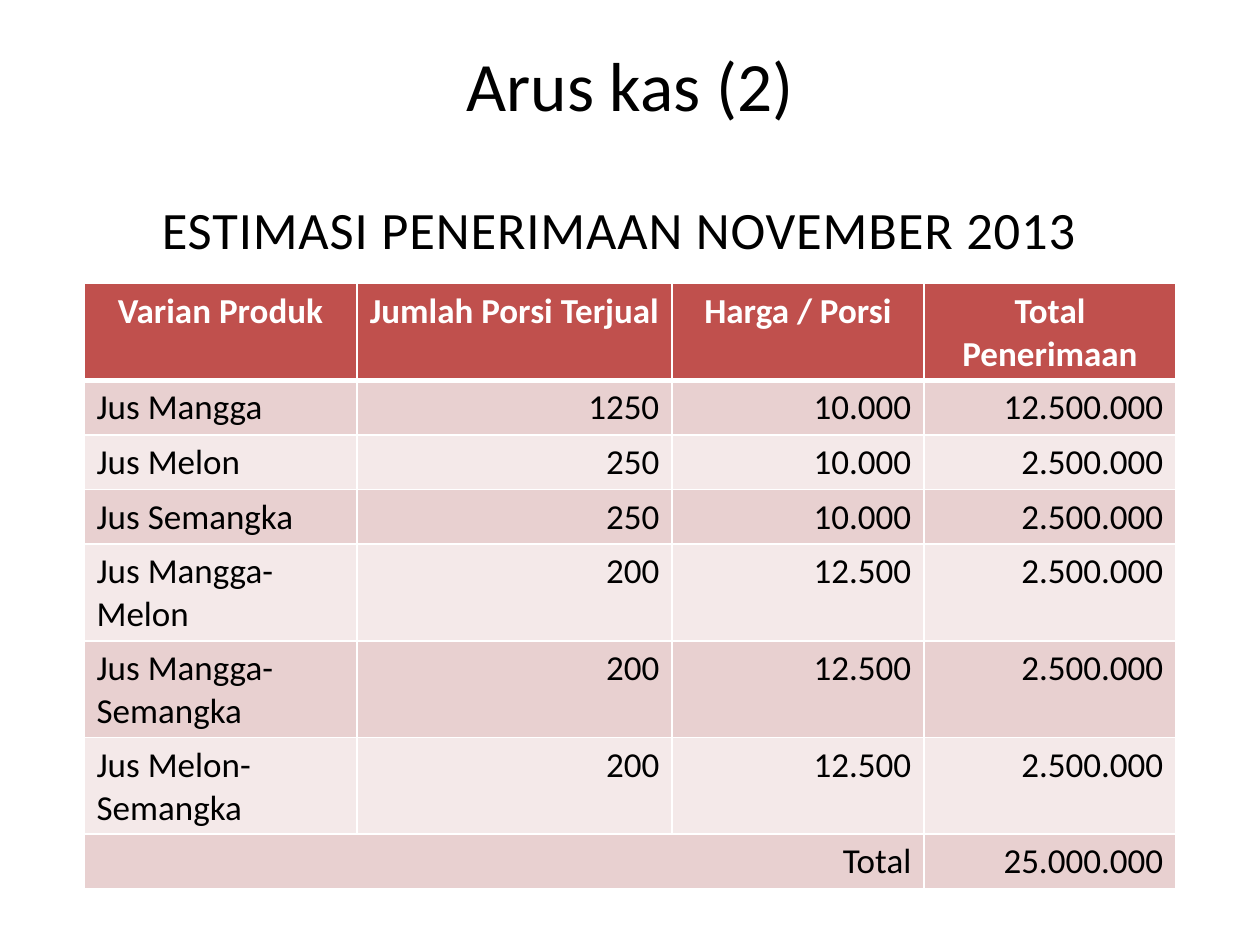
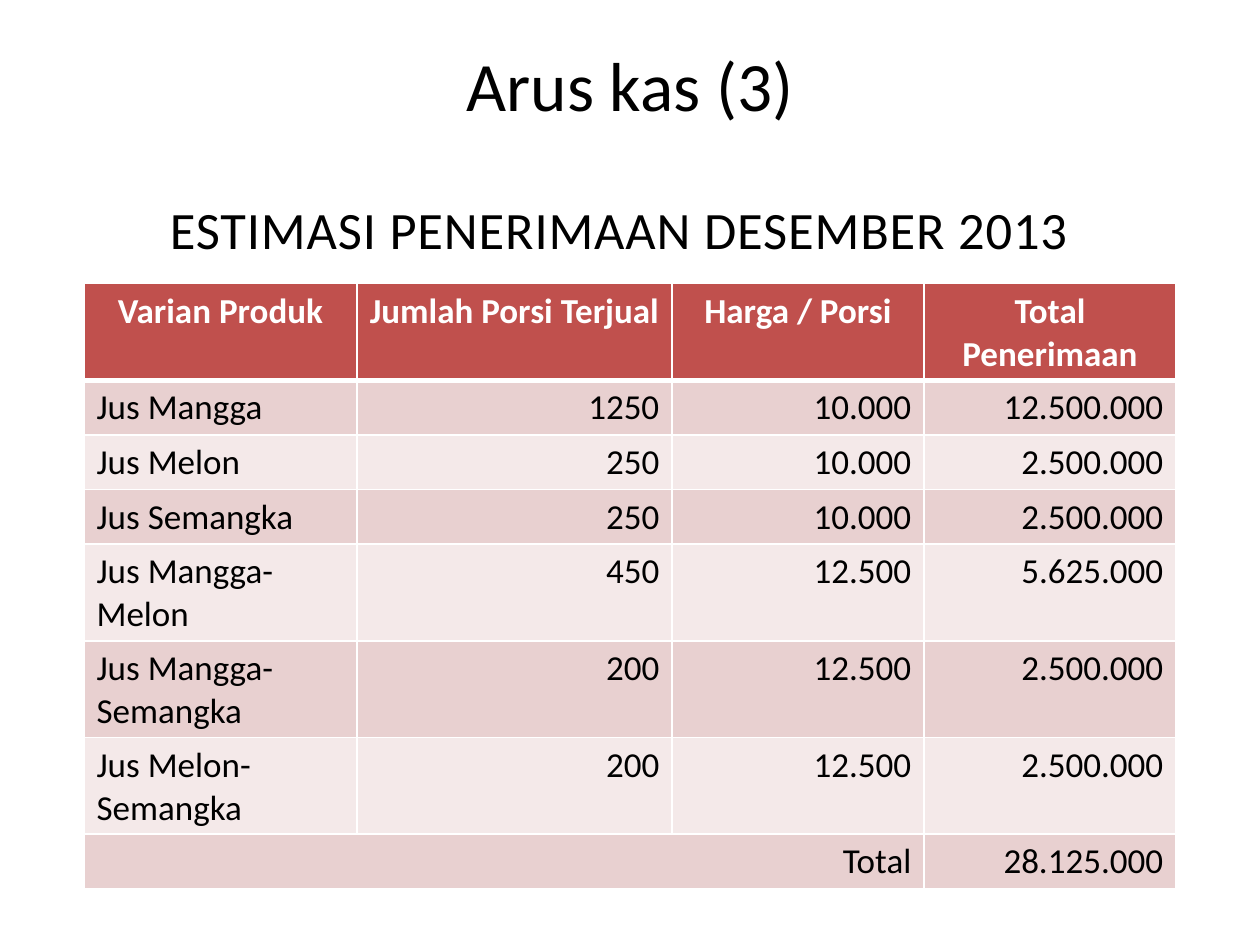
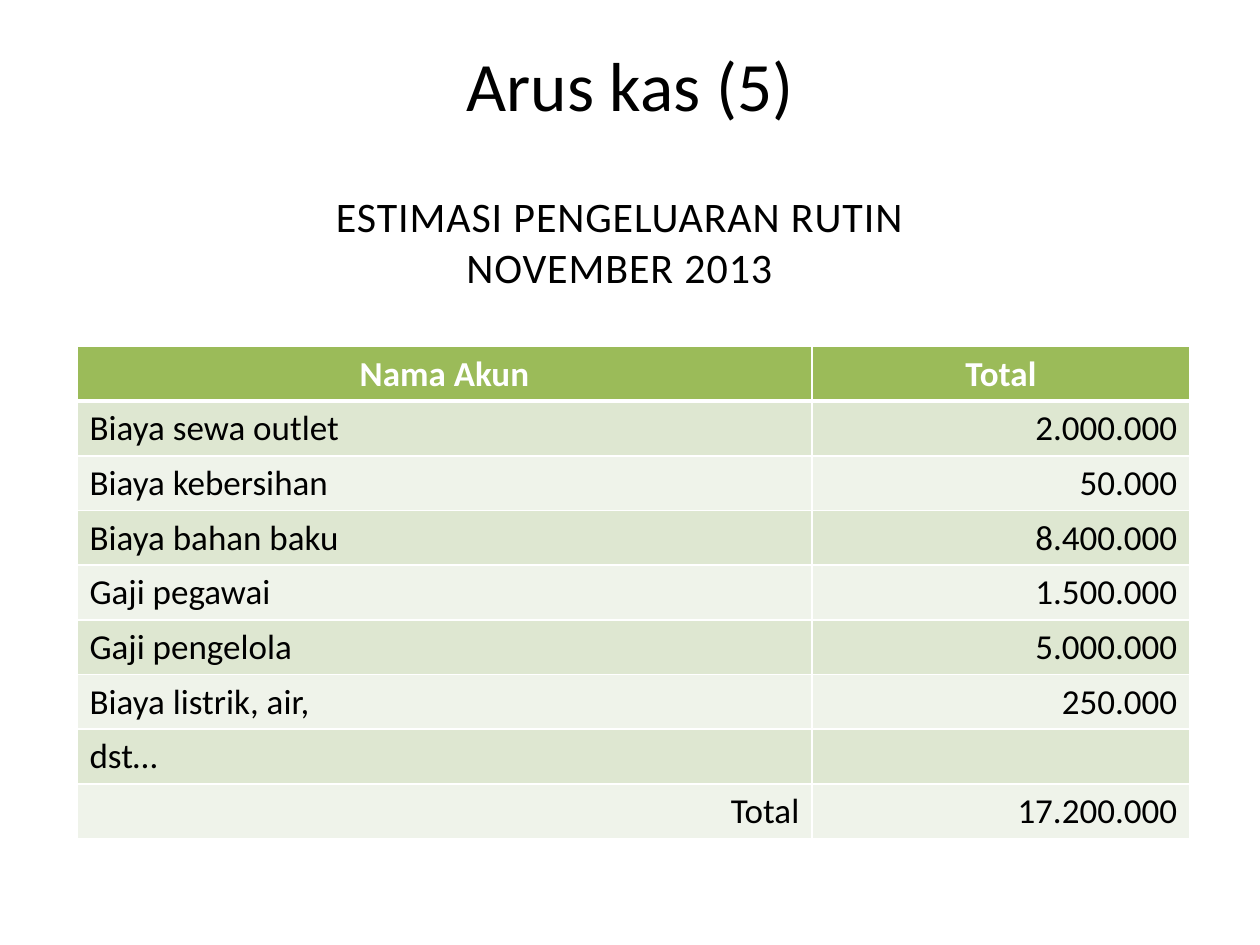
from pptx import Presentation
from pptx.dml.color import RGBColor
from pptx.enum.text import MSO_ANCHOR as Anchor, PP_ALIGN as Align
from pptx.oxml import parse_xml
from pptx.oxml.ns import nsdecls
from pptx.util import Pt

FONT = "Calibri"
BLACK, WHITE = "000000", "FFFFFF"
RED = ("C0504D", "E8D0D0", "F4E9E9")
GREEN = ("9BBB59", "DEE7D1", "EFF3EA")
ROW_HEIGHT = 29.2
LEFT, TEXT_WIDTH = 48, 624

INCOME_HEADER = ("Varian Produk", "Jumlah Porsi Terjual", "Harga / Porsi", "Total Penerimaan")
INCOME_LAYOUT = dict(
    colors=RED, left=LEFT, top=162, height=345.6, columns=(156, 180, 144, 144),
    subtitle_top=102, subtitle_height=48, subtitle_size=30,
)
EXPENSE_LAYOUT = dict(
    colors=GREEN, left=44, top=198, height=280.8, columns=(420, 216),
    subtitle_top=96, subtitle_height=72, subtitle_size=24,
)


def income_rows(mango_melon_sold, mango_melon_income, total):
    """Return the income table, in which one product and the total vary by month."""
    return [
        INCOME_HEADER,
        ("Jus Mangga", "1250", "10.000", "12.500.000"),
        ("Jus Melon", "250", "10.000", "2.500.000"),
        ("Jus Semangka", "250", "10.000", "2.500.000"),
        ("Jus Mangga-Melon", mango_melon_sold, "12.500", mango_melon_income),
        ("Jus Mangga-Semangka", "200", "12.500", "2.500.000"),
        ("Jus Melon-Semangka", "200", "12.500", "2.500.000"),
        ("Total", "", "", total),
    ]


EXPENSE_ROWS = [
    ("Nama Akun", "Total"),
    ("Biaya sewa outlet", "2.000.000"),
    ("Biaya kebersihan", "50.000"),
    ("Biaya bahan baku", "8.400.000"),
    ("Gaji pegawai", "1.500.000"),
    ("Gaji pengelola", "5.000.000"),
    ("Biaya listrik, air,", "250.000"),
    ("dst…", ""),
    ("Total", "17.200.000"),
]

SLIDES = [
    ("Arus kas (2)", "ESTIMASI PENERIMAAN NOVEMBER 2013",
     income_rows("200", "2.500.000", "25.000.000"), INCOME_LAYOUT),
    ("Arus kas (3)", "ESTIMASI PENERIMAAN DESEMBER 2013",
     income_rows("450", "5.625.000", "28.125.000"), INCOME_LAYOUT),
    ("Arus kas (5)", "ESTIMASI PENGELUARAN RUTIN\nNOVEMBER 2013",
     EXPENSE_ROWS, EXPENSE_LAYOUT),
]


def rgb(color):
    """Turn a hex string into a colour."""
    return RGBColor.from_string(color)


def write(frame, text, size=20, color=BLACK, bold=False, align=Align.LEFT, spacing=0):
    """Write each line of text as a formatted paragraph."""
    frame.text = text
    for paragraph in frame.paragraphs:
        paragraph.alignment = align
        paragraph.font.size = Pt(size)
        for run in paragraph.runs:
            run.font.name = FONT
            run.font.size = Pt(size)
            run.font.bold = bold
            run.font.color.rgb = rgb(color)
            if spacing:
                run.font._element.set("spc", str(int(spacing * 100)))


def add_text(slide, text, left, top, height, anchor, **style):
    """Add a centred text box."""
    frame = slide.shapes.add_textbox(Pt(left), Pt(top), Pt(TEXT_WIDTH), Pt(height)).text_frame
    frame.word_wrap = True
    frame.vertical_anchor = anchor
    frame.margin_top = frame.margin_bottom = Pt(1.4)
    write(frame, text, align=Align.CENTER, **style)


def set_borders(cell, **widths):
    """Draw white cell borders; they must precede the fill."""
    properties = cell._tc.get_or_add_tcPr()
    for side, width in widths.items():
        properties.append(parse_xml(
            f'<a:{side} {nsdecls("a")} w="{Pt(width)}"><a:solidFill>'
            f'<a:srgbClr val="{WHITE}"/></a:solidFill></a:{side}>'))


def add_table(slide, rows, colors, left, top, height, columns):
    """Add a banded table with a header and a closing total row."""
    header_color, *bands = colors
    last_row, last_column = len(rows) - 1, len(columns) - 1
    shape = slide.shapes.add_table(
        len(rows), len(columns), Pt(left), Pt(top), Pt(sum(columns)), Pt(height))
    table = shape.table
    for column, width in zip(table.columns, columns):
        column.width = Pt(width)
    for row_index, values in enumerate(rows):
        table.rows[row_index].height = Pt(ROW_HEIGHT)
        is_header = row_index == 0
        for column_index, value in enumerate(values):
            cell = table.cell(row_index, column_index)
            set_borders(cell, lnL=1, lnR=1, lnT=3 if row_index == 1 else 1,
                        lnB=3 if is_header else 1)
            cell.fill.solid()
            cell.fill.fore_color.rgb = rgb(header_color if is_header else bands[(row_index - 1) % 2])
            cell.margin_left = cell.margin_right = Pt(7.2)
            is_number = column_index > 0 or row_index == last_row
            align = Align.CENTER if is_header else Align.RIGHT if is_number else Align.LEFT
            write(cell.text_frame, value, color=WHITE if is_header else BLACK,
                  bold=is_header, align=align)
    if last_column > 1:
        table.cell(last_row, 0).merge(table.cell(last_row, last_column - 1))
    shape.height = Pt(height)


def add_cash_flow(presentation, title, subtitle, rows, layout):
    """Add a slide with a title, a subtitle and a table."""
    slide = presentation.slides.add_slide(presentation.slide_layouts[6])
    add_text(slide, title, LEFT, 24, 48, Anchor.MIDDLE, size=39.6)
    table_layout = {key: layout[key] for key in ("colors", "left", "top", "height", "columns")}
    add_table(slide, rows, **table_layout)
    add_text(slide, subtitle, 42, layout["subtitle_top"], layout["subtitle_height"],
             Anchor.BOTTOM, size=layout["subtitle_size"], spacing=0.5)


def main():
    """Build and save the presentation."""
    presentation = Presentation()
    presentation.slide_width, presentation.slide_height = Pt(720), Pt(540)
    for content in SLIDES:
        add_cash_flow(presentation, *content)
    presentation.save("out.pptx")


if __name__ == "__main__":
    main()
